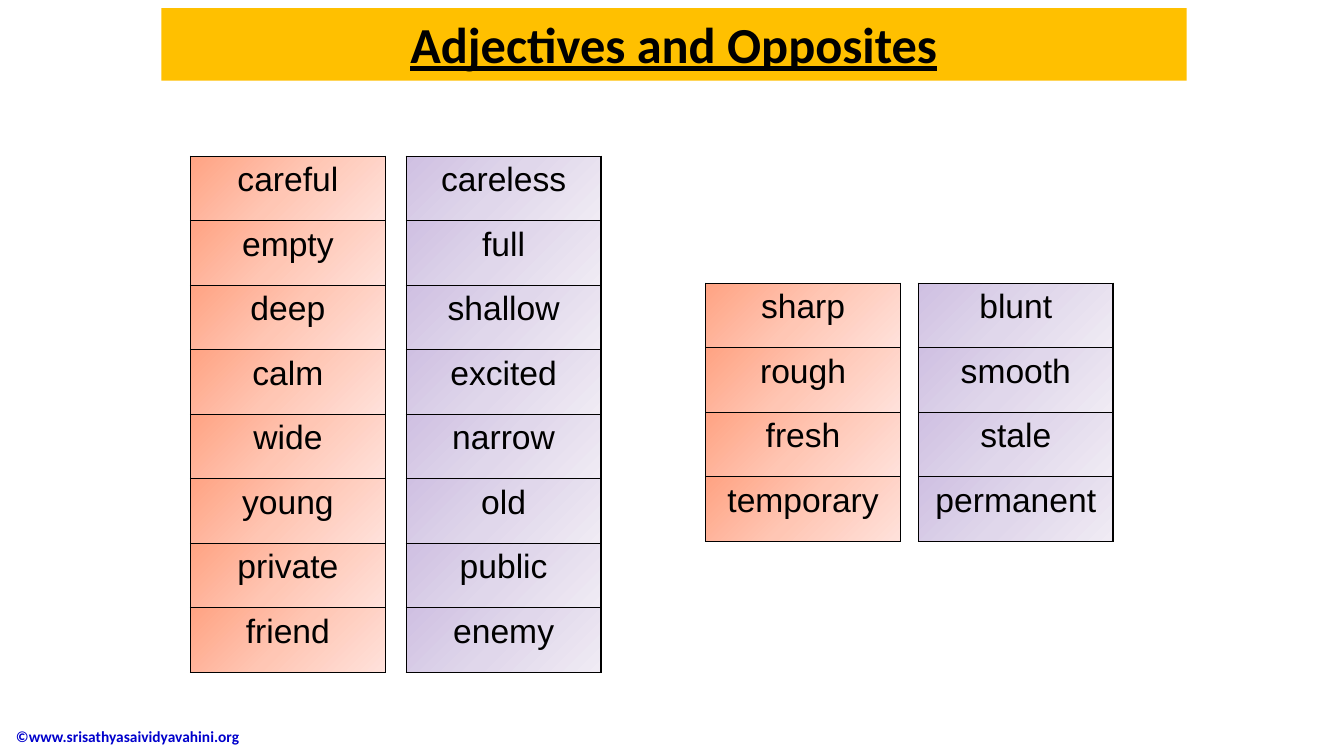
from dataclasses import dataclass

from lxml.etree import SubElement
from pptx import Presentation
from pptx.dml.color import RGBColor
from pptx.enum.text import MSO_ANCHOR as Anchor, MSO_AUTO_SIZE as Fit, PP_ALIGN as Align
from pptx.oxml.ns import qn
from pptx.slide import Slide
from pptx.table import _Cell as Cell
from pptx.text.text import Font
from pptx.util import Inches, Pt


@dataclass(frozen=True)
class Theme:
    head: str = "Calibri"
    body: str = "Arial"
    big: int = 36
    mid: int = 24
    small: int = 11
    ink: str = "000000"
    link: str = "0000CC"
    band: str = "FFC000"
    coral: tuple[str, ...] = ("FFA383", "FFC6B4", "FFE1DB")
    lilac: tuple[str, ...] = ("CFC0E2", "E0D7EB", "F0EBF4")


@dataclass(frozen=True)
class Column:
    left: float
    top: float
    tint: tuple[str, ...]
    words: tuple[str, ...]


THEME = Theme()
WIDTH, ROW = 1.93, 0.64
HIGH, LOW = 1.55, 2.81

COLUMNS = (
    Column(1.89, HIGH, THEME.coral,
           ("careful", "empty", "deep", "calm", "wide", "young", "private", "friend")),
    Column(4.03, HIGH, THEME.lilac,
           ("careless", "full", "shallow", "excited", "narrow", "old", "public", "enemy")),
    Column(7, LOW, THEME.coral, ("sharp", "rough", "fresh", "temporary")),
    Column(9.11, LOW, THEME.lilac, ("blunt", "smooth", "stale", "permanent")),
)


def style(font: Font, name: str, size: int, color: str, bold: bool = False) -> None:
    font.name, font.size, font.bold = name, Pt(size), bold
    font.color.rgb = RGBColor.from_string(color)


def paint(cell: Cell, tint: tuple[str, ...]) -> None:
    """Give a cell thin borders and a diagonal gradient."""
    props = cell._tc.get_or_add_tcPr()
    for side in ("lnL", "lnR", "lnT", "lnB"):
        line = SubElement(props, qn(f"a:{side}"), w=str(Pt(1)))
        solid = SubElement(line, qn("a:solidFill"))
        SubElement(solid, qn("a:srgbClr"), val=THEME.ink)
    grad = SubElement(props, qn("a:gradFill"), rotWithShape="1")
    stops = SubElement(grad, qn("a:gsLst"))
    for i, color in enumerate(tint):
        stop = SubElement(stops, qn("a:gs"), pos=str(i * 50000))
        SubElement(stop, qn("a:srgbClr"), val=color)
    SubElement(grad, qn("a:lin"), ang=str(45 * 60000), scaled="1")


def add_column(slide: Slide, col: Column) -> None:
    count = len(col.words)
    table = slide.shapes.add_table(
        count, 1, Inches(col.left), Inches(col.top), Inches(WIDTH), Inches(ROW * count)
    ).table
    table.first_row = table.horz_banding = False
    for i, word in enumerate(col.words):
        table.rows[i].height = Inches(ROW)
        cell = table.cell(i, 0)
        cell.text_frame.text = word
        para = cell.text_frame.paragraphs[0]
        para.alignment = Align.CENTER
        style(para.runs[0].font, THEME.body, THEME.mid, THEME.ink)
        paint(cell, col.tint)


def add_title(slide: Slide, text: str) -> None:
    title = slide.shapes.title
    title.left, title.top = Inches(1.6), Inches(0.08)
    title.width, title.height = Inches(10.17), Inches(0.72)
    title.fill.solid()
    title.fill.fore_color.rgb = RGBColor.from_string(THEME.band)
    frame = title.text_frame
    frame.text = text
    frame.auto_size, frame.vertical_anchor = Fit.NONE, Anchor.TOP
    para = frame.paragraphs[0]
    para.alignment = Align.CENTER
    font = para.runs[0].font
    style(font, THEME.head, THEME.big, THEME.ink, bold=True)
    font.underline = True


def add_credit(slide: Slide, text: str) -> None:
    box = slide.shapes.add_textbox(Inches(0.06), Inches(7.1), Inches(3.53), Inches(0.41))
    frame = box.text_frame
    frame.text = text
    frame.word_wrap, frame.vertical_anchor = True, Anchor.MIDDLE
    style(frame.paragraphs[0].runs[0].font, THEME.head, THEME.small, THEME.link, bold=True)


def main() -> None:
    deck = Presentation()
    deck.slide_width, deck.slide_height = Inches(13.33), Inches(7.5)
    slide = deck.slides.add_slide(deck.slide_layouts.get_by_name("Title Only"))
    add_title(slide, "Adjectives and Opposites")
    for col in COLUMNS:
        add_column(slide, col)
    add_credit(slide, "©www.srisathyasaividyavahini.org")
    deck.save("out.pptx")


if __name__ == "__main__":
    main()
